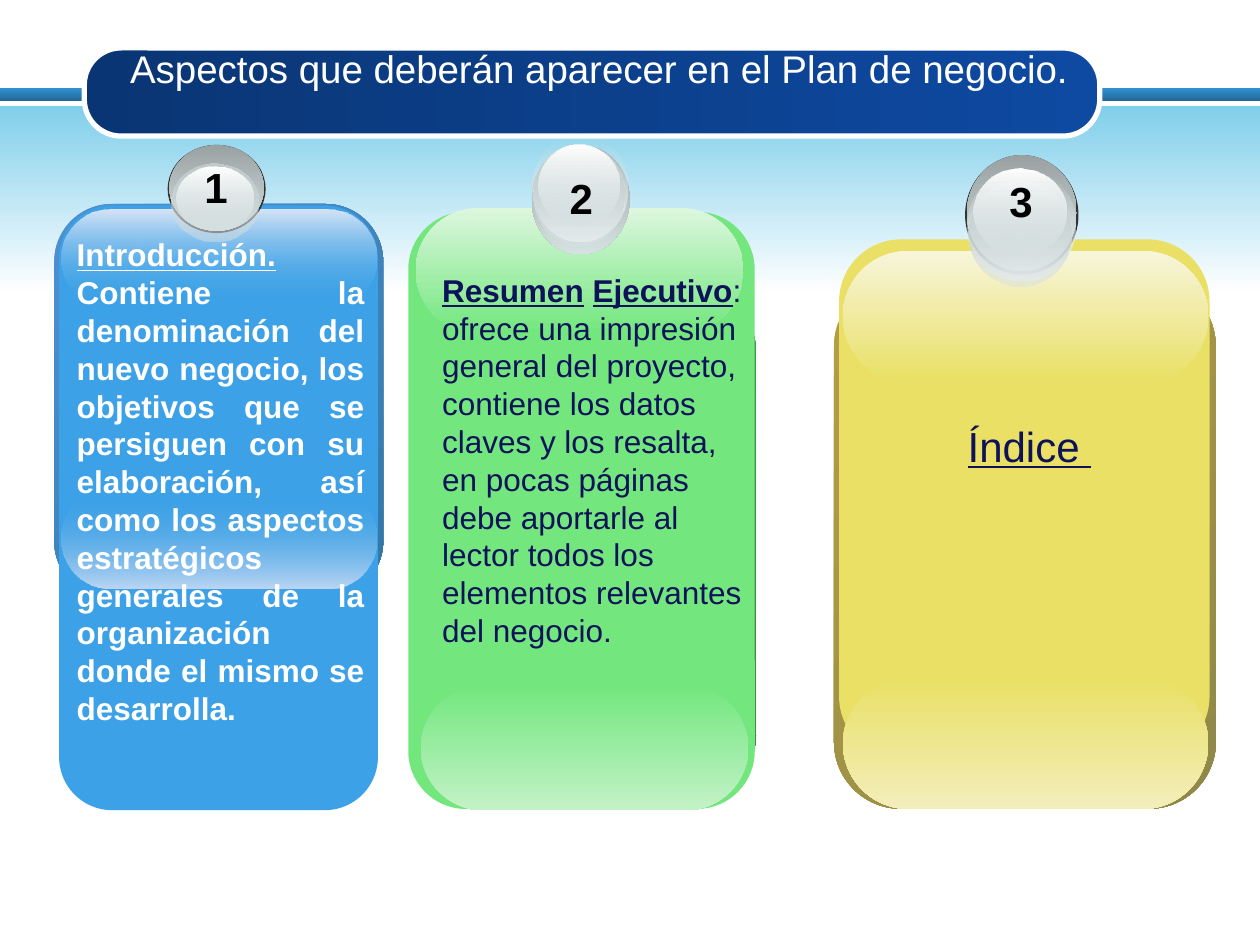
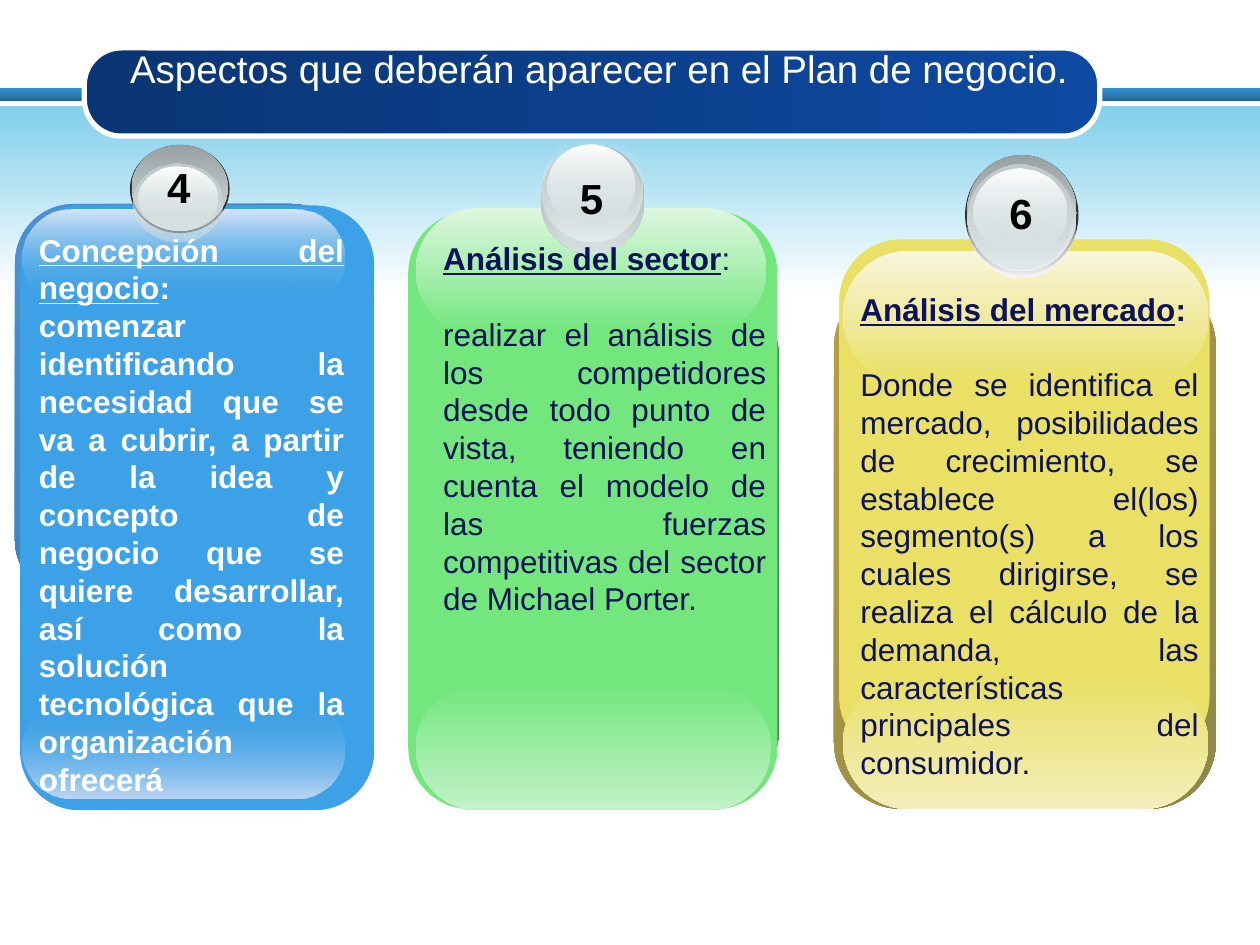
from lxml.etree import SubElement
from pptx import Presentation
from pptx.dml.color import RGBColor
from pptx.enum.shapes import MSO_SHAPE
from pptx.enum.text import MSO_ANCHOR, MSO_AUTO_SIZE, PP_ALIGN
from pptx.oxml.ns import qn
from pptx.util import Pt

NAVY, WHITE, BLACK = "0D1259", "FFFFFF", "000000"
FONT = "Arial"
LINE = 1.2  # line height as a multiple of the text size
TITLE = "Aspectos que deberán aparecer en el Plan de negocio."


def add_filled(slide, kind, box, colours, angle=90, alphas=(100, 100), adjustment=None):
    """Add a shape with one flat colour or a two-colour gradient."""
    shape = slide.shapes.add_shape(kind, *map(Pt, box))
    shape.shadow.inherit = False
    shape.line.fill.background()
    if adjustment is not None:
        shape.adjustments[0] = adjustment
    if len(colours) == 1:
        shape.fill.solid()
        shape.fill.fore_color.rgb = RGBColor.from_string(colours[0])
        return shape
    shape.fill.gradient()
    shape.fill.gradient_angle = -angle % 360
    for stop, colour in zip(shape.fill.gradient_stops, colours):
        stop.color.rgb = RGBColor.from_string(colour)
    for stop_element, alpha in zip(shape.element.iter(qn("a:gs")), alphas):
        if alpha < 100:
            SubElement(stop_element[0], qn("a:alpha"), val=str(alpha * 1000))
    return shape


def add_text(slide, box, paragraphs, size, colour, alignment, gap=0, wrap=True):
    """Add a text box; each paragraph is a list of (text, bold, underline)."""
    text_box = slide.shapes.add_textbox(*map(Pt, box))
    frame = text_box.text_frame
    frame.word_wrap = wrap
    for index, runs in enumerate(paragraphs):
        paragraph = frame.add_paragraph() if index else frame.paragraphs[0]
        paragraph.alignment = alignment
        paragraph.line_spacing = Pt(size * LINE)
        paragraph.space_before = Pt(gap if index else 0)
        paragraph.font.name = FONT
        paragraph.font.size = Pt(size)
        paragraph.font.color.rgb = RGBColor.from_string(colour)
        for text, bold, underline in runs:
            run = paragraph.add_run()
            run.text = text
            run.font.bold = bold
            run.font.underline = underline


# Column styles: panel colours, gloss opacity, and the layers of the number ball
COLUMNS = [
    {"edge": ("4E91D4", "3477A4"), "face": "3CA1E6", "low": "BDD6F3", "high": "D7E5F7",
     "fade": 0, "layers": ["shadow", "base", "body", "shine"],
     "heights": [50.4, 49, 44.6, 36], "text": WHITE},
    {"edge": ("34B034", "3F8B4A"), "face": "73E77E", "low": "C3F2C7", "high": "DDF7DF",
     "fade": 100, "layers": ["base", "rim", "body", "shine"],
     "heights": [62.6, 61.2, 56.9, 46.1], "text": NAVY},
    {"edge": ("B59F43", "8F8849"), "face": "E9E065", "low": "F3EEBB", "high": "F8F5DB",
     "fade": 100, "layers": ["shadow", "base", "rim", "body", "shine"],
     "heights": [68.4, 66.2, 64, 59.8, 49], "text": NAVY},
]

# Ball layers: left inset, width reduction, colours, opacity
BALL_LAYERS = {
    "shadow": (0, 0, ["333333"], (100, 100)),
    "base": (1, 2, ["99A1A2", "D6E1E2"], (100, 100)),
    "rim": (1.5, 3.5, ["D6E1E2", "F2F5F5"], (0, 100)),
    "body": (2, 6, ["C1CBCC", "D6E1E2"], (100, 48)),
    "shine": (5, 12, ["FFFFFF", "D6E1E2"], (100, 38)),
}

# Panel boxes run: edge, face, lower gloss, upper gloss
YELLOW_PANELS = [(476.6, 159.8, 218.2, 302.4), (479.5, 136.8, 211.7, 296.6),
                 (481.7, 387.4, 208.8, 74.9), (481.7, 143.3, 208.8, 74.9)]
BLUE_TOPS = [82.8, 82.8, 93.6, 95]
GREEN_TOPS = [82.8, 77, 82.8, 82.8]

SLIDES = [
    [
        {"panels": [(31, 116.6, 188, 225.4), (33.8, 117.4, 182.2, 345.6),
                    (35.3, 280, 180, 56.2), (35.3, 119.5, 180, 55.4)],
         "ball": (95.8, 56), "tops": BLUE_TOPS, "number": (108, 88.6, 31, 36),
         "box": (36.7, 131, 178.6, 291), "alignment": PP_ALIGN.JUSTIFY, "gap": 0,
         "paragraphs": [[
             ("Introducción. ", True, True),
             ("Contiene la denominación del nuevo negocio, los objetivos que se "
              "persiguen con su elaboración, así como los aspectos estratégicos "
              "generales de la organización donde el mismo se desarrolla.", True, False)]]},
        {"panels": [(236.2, 166.3, 195.8, 288), (233.3, 121, 198, 341.3),
                    (240.5, 391.7, 187.2, 71.3), (237.6, 118.8, 187.2, 71.3)],
         "ball": (302.8, 58), "tops": GREEN_TOPS, "number": (318.2, 95, 28, 36),
         "box": (245.5, 151.2, 186.5, 291), "alignment": PP_ALIGN.LEFT, "gap": 0,
         "paragraphs": [[
             ("Resumen", True, True), (" ", False, False), ("Ejecutivo", True, True),
             (": ofrece una impresión general del proyecto, contiene los datos claves "
              "y los resalta, en pocas páginas debe aportarle al lector todos los "
              "elementos relevantes del negocio.", False, False)]]},
        {"panels": YELLOW_PANELS, "ball": (551.5, 64.8),
         "tops": [88.6, 88.6, 96.5, 103.7, 96.5], "number": (569.5, 96.5, 28, 36),
         "box": (484.6, 236.9, 207.4, 65.5), "alignment": PP_ALIGN.CENTER, "gap": 0,
         "size": 24, "paragraphs": [[("Índice ", False, True)]]},
    ],
    [
        {"panels": [(8.6, 116.6, 191.5, 225.4), (11.5, 117.4, 202.3, 345.6),
                    (13, 400.3, 183.6, 56.2), (13, 119.5, 183.6, 55.4)],
         "ball": (74.2, 57), "tops": BLUE_TOPS, "number": (86.4, 88.6, 31.7, 36),
         "box": (15.1, 128.2, 188.6, 334), "alignment": PP_ALIGN.JUSTIFY, "gap": 0,
         "paragraphs": [
             [("Concepción del negocio", True, True), (":", True, False)],
             [("comenzar identificando la necesidad que se va a cubrir, a partir de la "
               "idea y concepto de negocio que se quiere desarrollar, así como la "
               "solución tecnológica que la organización ofrecerá", True, False)]]},
        {"panels": [(236.2, 166.3, 208.8, 288), (233.3, 121, 211, 341.3),
                    (237.6, 391.7, 203, 71.3), (237.6, 118.8, 200.2, 71.3)],
         "ball": (307.9, 61.5), "tops": GREEN_TOPS, "number": (323.3, 95, 29.5, 36),
         "box": (246.2, 133.2, 198.7, 269), "alignment": PP_ALIGN.JUSTIFY, "gap": 21.6,
         "paragraphs": [
             [("Análisis del sector", True, True), (":", False, False)],
             [("realizar el análisis de los competidores desde todo punto de vista, "
               "teniendo en cuenta el modelo de las fuerzas competitivas del sector "
               "de Michael Porter.", False, False)]]},
        {"panels": YELLOW_PANELS, "ball": (551.5, 64.8),
         "tops": [88.6, 88.6, 94.3, 94.3, 96.5], "number": (569.5, 103.7, 28, 36),
         "box": (484.6, 162, 207.4, 319.7), "alignment": PP_ALIGN.JUSTIFY, "gap": 21.6,
         "paragraphs": [
             [("Análisis del mercado", True, True), (":", True, False)],
             [("Donde se identifica el mercado, posibilidades de crecimiento, se "
               "establece el(los) segmento(s) a los cuales dirigirse, se realiza el "
               "cálculo de la demanda, las características principales del "
               "consumidor.", False, False)]]},
    ],
]

presentation = Presentation()
presentation.slide_width, presentation.slide_height = Pt(720), Pt(540)
layout = presentation.slide_layouts[5]

# Shared title position; the layout keeps only its title
for placeholder in list(layout.placeholders):
    if placeholder.placeholder_format.idx:
        layout.shapes.element.remove(placeholder.element)
    else:
        placeholder.left, placeholder.top = Pt(66.2), Pt(25.5)
        placeholder.width, placeholder.height = Pt(552.3), Pt(47)
slides = [presentation.slides.add_slide(layout) for _ in SLIDES]

# Shared bands and title bar, moved to the layout
first = slides[0]
decorations = [
    add_filled(first, MSO_SHAPE.RECTANGLE, (0, 50.4, 720, 7.2), ["3191D3", "236897"]),
    add_filled(first, MSO_SHAPE.RECTANGLE, (0, 60.5, 720, 107.3), ["81CFEB", WHITE]),
    add_filled(first, MSO_SHAPE.ROUNDED_RECTANGLE, (48.2, 27.4, 580.3, 50.4),
               ["0A3574", "0E4AA2"], angle=0, adjustment=0.419),
]
title_bar = decorations[-1]
title_bar.line.color.rgb = RGBColor.from_string(WHITE)
title_bar.line.width = Pt(3)
for position, decoration in enumerate(decorations, start=2):
    layout.shapes.element.insert(position, decoration.element)

number = 0
for slide, cards in zip(slides, SLIDES):
    # Title
    frame = slide.shapes.title.text_frame
    frame.text = TITLE
    frame.auto_size = MSO_AUTO_SIZE.NONE
    frame.vertical_anchor = MSO_ANCHOR.TOP
    frame.margin_left = frame.margin_right = frame.margin_top = frame.margin_bottom = 0
    paragraph = frame.paragraphs[0]
    paragraph.alignment = PP_ALIGN.CENTER
    paragraph.font.name = FONT
    paragraph.font.size = Pt(22)
    paragraph.font.color.rgb = RGBColor.from_string(WHITE)

    for column, card in zip(COLUMNS, cards):
        number += 1
        face, fade = column["face"], column["fade"]

        # Panel with its edge and two glosses
        panel_paints = [
            (column["edge"], 45, (100, 100), 0.175),
            ([face], 0, (100, 100), 0.167),
            ([face, column["low"]], 90, (fade, 100), 0.5),
            ([column["high"], face], 90, (100, fade), 0.5),
        ]
        for box, paint in zip(card["panels"], panel_paints):
            add_filled(slide, MSO_SHAPE.ROUNDED_RECTANGLE, box, *paint)

        # Number ball
        ball_left, ball_width = card["ball"]
        for layer, top, height in zip(column["layers"], card["tops"], column["heights"]):
            inset, reduction, colours, alphas = BALL_LAYERS[layer]
            add_filled(slide, MSO_SHAPE.OVAL,
                       (ball_left + inset, top, ball_width - reduction, height),
                       colours, alphas=alphas)
        add_text(slide, card["number"], [[(str(number), True, False)]], 24, BLACK,
                 PP_ALIGN.CENTER, wrap=False)

        # Card text
        add_text(slide, card["box"], card["paragraphs"], card.get("size", 18),
                 column["text"], card["alignment"], card["gap"])

presentation.save("out.pptx")
